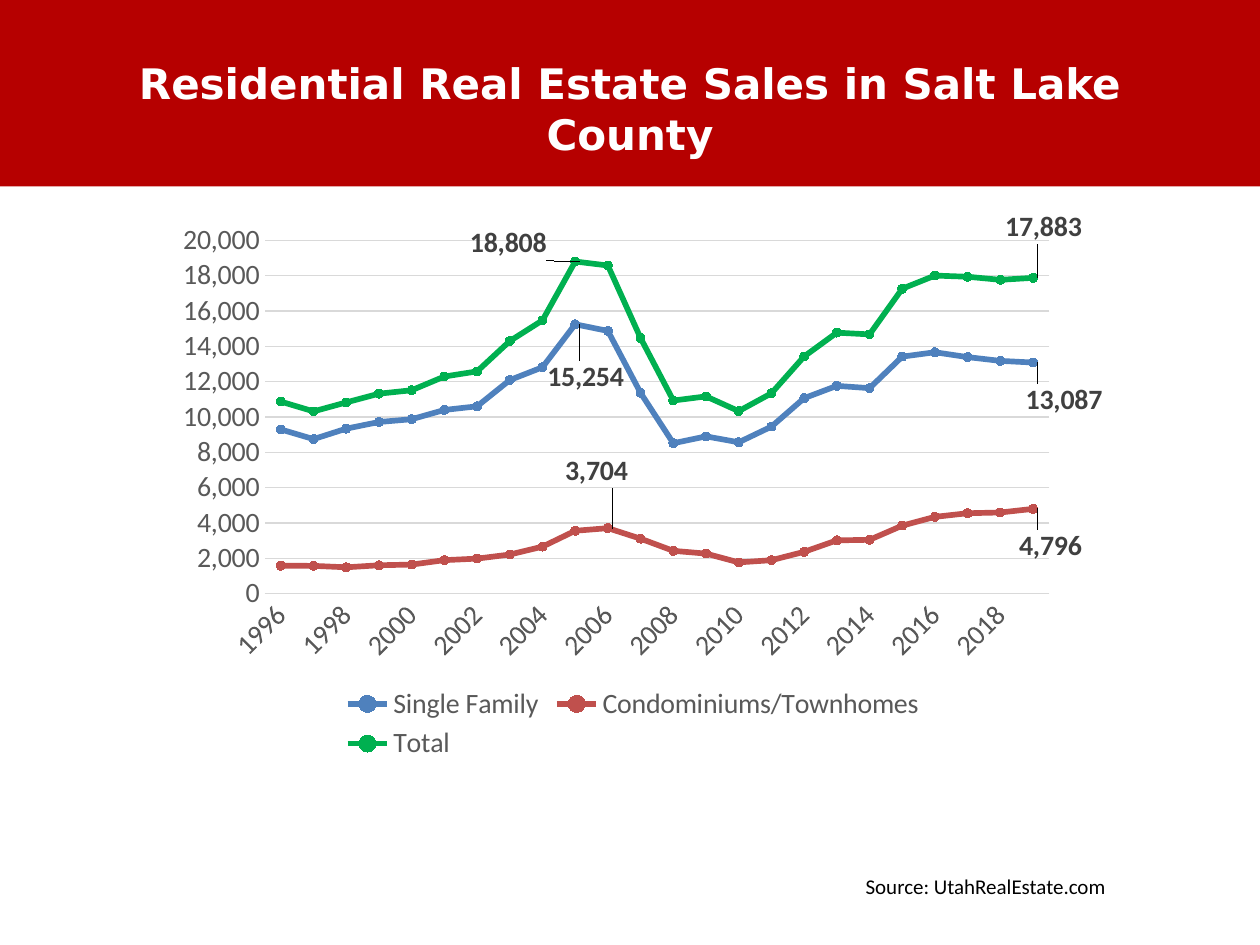
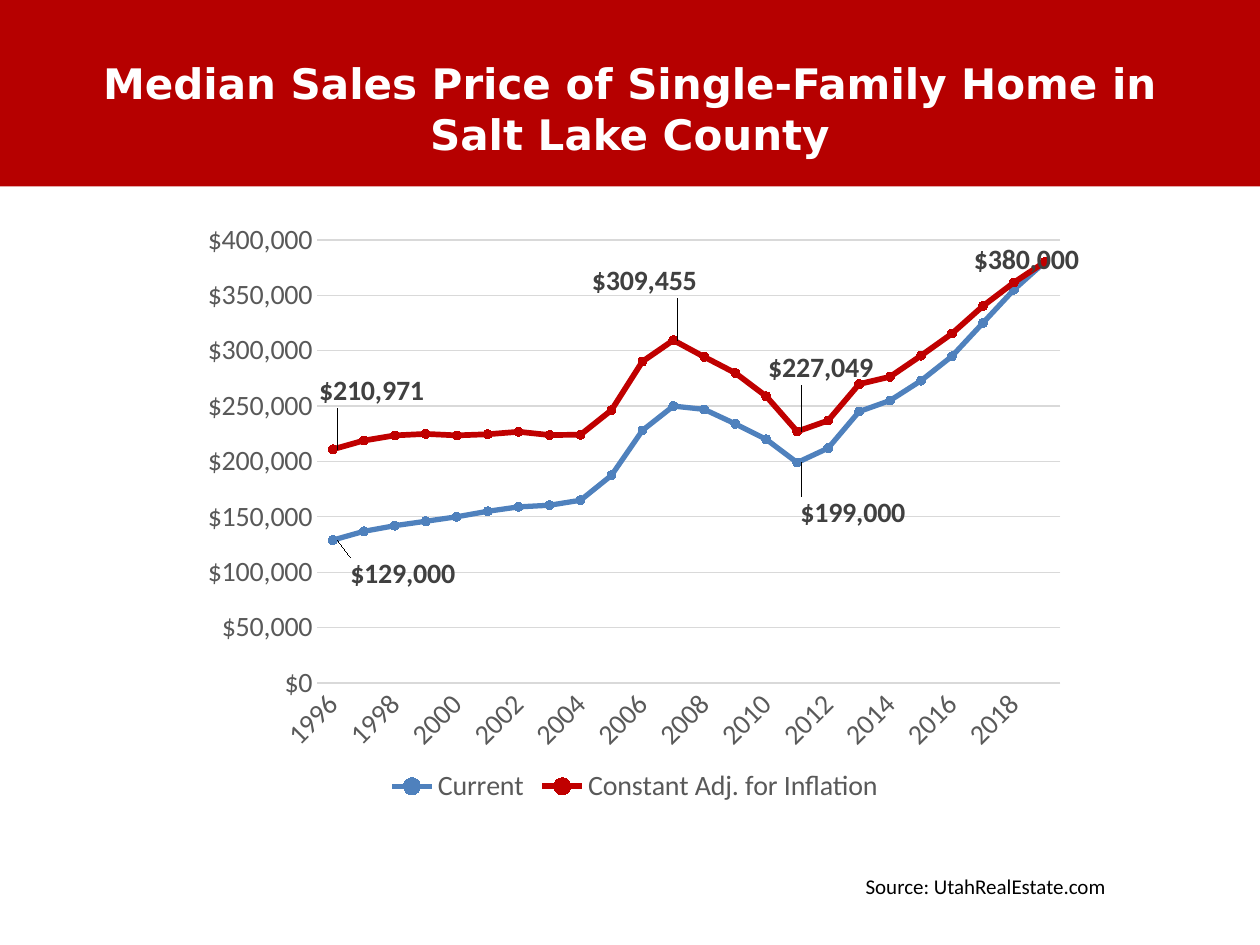
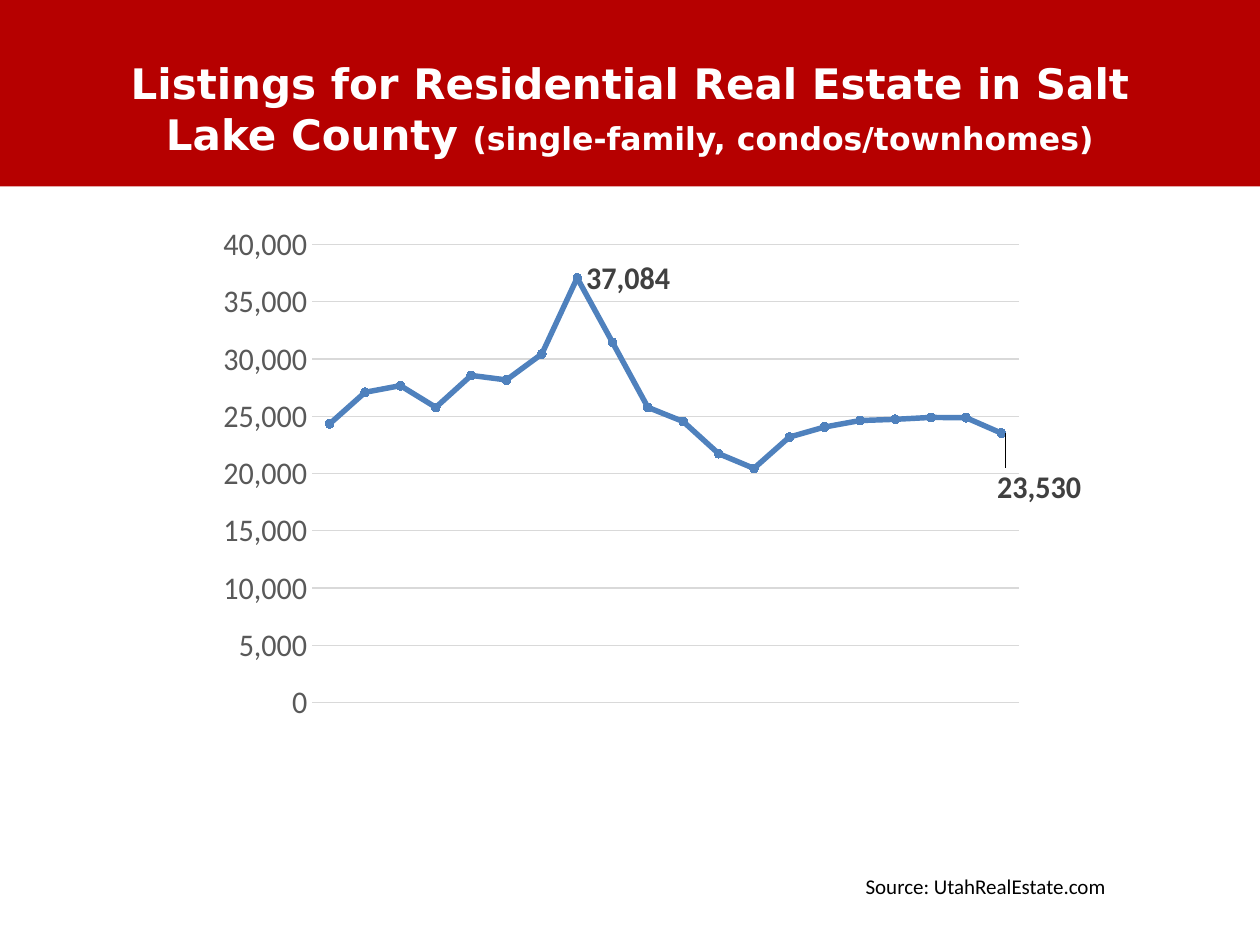
from dataclasses import dataclass

from lxml import etree
from pptx import Presentation
from pptx.chart.data import CategoryChartData
from pptx.dml.color import RGBColor
from pptx.enum.chart import (XL_CHART_TYPE, XL_LABEL_POSITION, XL_LEGEND_POSITION,
                             XL_MARKER_STYLE, XL_TICK_LABEL_POSITION, XL_TICK_MARK)
from pptx.enum.shapes import MSO_SHAPE
from pptx.enum.text import MSO_AUTO_SIZE, PP_ALIGN
from pptx.oxml import parse_xml
from pptx.oxml.ns import qn
from pptx.util import Cm, Pt

LINE_MARKERS = XL_CHART_TYPE.LINE_MARKERS
LABEL_RIGHT = XL_LABEL_POSITION.RIGHT
LEGEND_BOTTOM = XL_LEGEND_POSITION.BOTTOM
CIRCLE = XL_MARKER_STYLE.CIRCLE
NO_LABELS = XL_TICK_LABEL_POSITION.NONE
NO_TICKS = XL_TICK_MARK.NONE
RECTANGLE = MSO_SHAPE.RECTANGLE
FIT_SHAPE = MSO_AUTO_SIZE.SHAPE_TO_FIT_TEXT
CENTER = PP_ALIGN.CENTER

CHART_NS = "http://schemas.openxmlformats.org/drawingml/2006/chart"
LEADER_LINES = (
    f'<c:extLst xmlns:c="{CHART_NS}"><c:ext uri="{{CE6537A1-D6FC-4f65-9D91-7224C49458BB}}" '
    'xmlns:c15="http://schemas.microsoft.com/office/drawing/2012/chart">'
    '<c15:showLeaderLines val="1"/></c:ext></c:extLst>'
)


@dataclass(frozen=True)
class Theme:
    """Colours, fonts and type sizes shared by the slides."""
    band: str = "B60000"
    title: str = "FFFFFF"
    source: str = "000000"
    axis: str = "595959"
    grid: str = "D9D9D9"
    label: str = "404040"
    blue: str = "4F81BD"
    brick: str = "C0504D"
    green: str = "00B050"
    red: str = "C00000"
    title_font: str = "DejaVu Sans"
    body_font: str = "Calibri"
    title_size: int = 24
    subtitle_size: int = 18
    source_size: int = 12


THEME = Theme()


@dataclass
class Line:
    """One chart line; labels map a year to an offset in percent of the chart."""
    name: str
    color: str
    values: list
    labels: dict
    width: float = 3.25


def set_font(font, size, color, name=THEME.body_font, bold=False):
    """Apply a complete font format."""
    font.name, font.size, font.bold = name, Pt(size), bold
    font.color.rgb = RGBColor.from_string(color)


def add_span(para, text, **font_format):
    """Append formatted text to a paragraph."""
    span = para.add_run()
    span.text = text
    set_font(span.font, **font_format)


def add_frame(page, title, subtitle=""):
    """Draw the title band, the title and the source line."""
    band = page.shapes.add_shape(RECTANGLE, 0, 0, Cm(25.4), Cm(3.76))
    band.shadow.inherit = False
    band.fill.solid()
    band.fill.fore_color.rgb = RGBColor.from_string(THEME.band)
    band.line.fill.background()

    title_box = page.shapes.add_textbox(Cm(1.27), Cm(1.04), Cm(22.86), Cm(3.18))
    title_box.text_frame.word_wrap = True
    para = title_box.text_frame.paragraphs[0]
    para.alignment = CENTER
    style = {"color": THEME.title, "name": THEME.title_font, "bold": True}
    add_span(para, title, size=THEME.title_size, **style)
    if subtitle:
        add_span(para, subtitle, size=THEME.subtitle_size, **style)

    source_box = page.shapes.add_textbox(Cm(17.2), Cm(17.48), Cm(5.41), Cm(0.76))
    source_box.text_frame.word_wrap = False
    source_box.text_frame.auto_size = FIT_SHAPE
    add_span(source_box.text_frame.paragraphs[0], "Source: UtahRealEstate.com",
             size=THEME.source_size, color=THEME.source)


def manual_layout(**parts):
    """Return a chart layout element with the given parts in order."""
    layout = parse_xml(f'<c:layout xmlns:c="{CHART_NS}"><c:manualLayout/></c:layout>')
    for tag, value in parts.items():
        etree.SubElement(layout[0], qn(f"c:{tag}")).set("val", str(value))
    return layout


def place_plot(chart, left, top, width, height):
    """Fix the inner plot area, in percent of the chart."""
    area = chart._chartSpace.chart.plotArea
    for layout in area.findall(qn("c:layout")):
        area.remove(layout)
    area.insert(0, manual_layout(layoutTarget="inner", xMode="edge", yMode="edge",
                                 x=left / 100, y=top / 100,
                                 w=width / 100, h=height / 100))


def style_line(series, line, first_year, size):
    """Format a chart line with its markers and point labels."""
    color = RGBColor.from_string(line.color)
    series.smooth = False
    series.format.line.color.rgb = color
    series.format.line.width = Pt(line.width)
    series.marker.style = CIRCLE
    series.marker.size = 5
    series.marker.format.fill.solid()
    series.marker.format.fill.fore_color.rgb = color
    series.marker.format.line.color.rgb = color

    series.data_labels.show_value = False
    for year, (right, down) in line.labels.items():
        index = year - first_year
        label = series.points[index].data_label
        set_font(label.font, size, THEME.label, bold=True)
        label.position = LABEL_RIGHT
        if right or down:
            element = series._element.xpath(f'c:dLbls/c:dLbl[c:idx/@val="{index}"]')[0]
            element.insert(1, manual_layout(x=right / 100, y=down / 100))
    series._element.find(qn("c:dLbls")).append(parse_xml(LEADER_LINES))


def style_axes(chart, size, top, step, show_years):
    """Format both axes and the gridlines."""
    years, amounts = chart.category_axis, chart.value_axis
    for axis in (years, amounts):
        axis.major_tick_mark = axis.minor_tick_mark = NO_TICKS
        set_font(axis.tick_labels.font, size, THEME.axis)
    grid = amounts.major_gridlines.format.line
    for rule in (years.format.line, grid):
        rule.color.rgb = RGBColor.from_string(THEME.grid)
        rule.width = Pt(0.75)
    amounts.format.line.fill.background()
    amounts.minimum_scale, amounts.maximum_scale, amounts.major_unit = 0, top, step
    if show_years:
        years._element.find(qn("c:txPr")).find(qn("a:bodyPr")).set("rot", "-2700000")
    else:
        years.tick_label_position = NO_LABELS


def add_line_chart(page, place, lines, first_year, top, step, plot,
                   size=16, number_format="#,##0", show_years=True):
    """Add a yearly line chart, with a legend if it has several lines."""
    data = CategoryChartData(number_format=number_format)
    data.categories = [str(first_year + i) for i in range(len(lines[0].values))]
    for line in lines:
        data.add_series(line.name, line.values)
    chart = page.shapes.add_chart(LINE_MARKERS, *map(Cm, place), data).chart
    set_font(chart.font, size, THEME.source)
    chart.has_title = False
    chart.plots[0].vary_by_categories = False
    chart.has_legend = len(lines) > 1
    if chart.has_legend:
        chart.legend.position = LEGEND_BOTTOM
        chart.legend.include_in_layout = False
        set_font(chart.legend.font, size, THEME.axis)
    style_axes(chart, size, top, step, show_years)
    chart.value_axis.tick_labels.number_format = number_format
    chart.value_axis.tick_labels.number_format_is_linked = False
    for series, line in zip(chart.plots[0].series, lines):
        style_line(series, line, first_year, size)
    place_plot(chart, *plot)


SALES = [
    Line("Single Family", THEME.blue,
         [9299, 8750, 9343, 9719, 9875, 10403, 10606, 12093, 12819, 15254, 14878, 11368,
          8517, 8905, 8570, 9458, 11067, 11768, 11636, 13421, 13669, 13395, 13179, 13087],
         {2005: (-4, 9.5), 2019: (-1.8, 6.8)}),
    Line("Condominiums/Townhomes", THEME.brick,
         [1576, 1570, 1487, 1604, 1642, 1892, 1979, 2209, 2657, 3554, 3704, 3108,
          2419, 2264, 1765, 1889, 2363, 3012, 3045, 3847, 4344, 4549, 4592, 4796],
         {2006: (-5.6, -10.2), 2019: (-2.5, 6.8)}),
    Line("Total", THEME.green,
         [10875, 10320, 10830, 11323, 11517, 12295, 12585, 14302, 15476, 18808, 18582, 14476,
          10936, 11169, 10335, 11347, 13430, 14780, 14681, 17268, 18013, 17944, 17771, 17883],
         {2005: (-12.3, -3.2), 2019: (-4, -9)}),
]

PRICES = [
    Line("Current", THEME.blue,
         [129000, 136900, 142000, 146000, 150000, 155000, 159000, 160500,
          165000, 187500, 228000, 250000, 247000, 233947, 220000, 199000,
          212000, 245000, 255000, 272900, 295000, 325000, 355000, 380000],
         {1996: (0.9, 5.7), 2011: (-0.7, 8.5)}, width=3),
    Line("Constant Adj. for Inflation", THEME.red,
         [210971, 218869, 223541, 224872, 223519, 224579, 226789, 223828,
          224134, 246352, 290202, 309455, 294381, 279864, 258835, 227049,
          236930, 269815, 276439, 295469, 315404, 340249, 361480, 380000],
         {1996: (-2.6, -9.7), 2007: (-10.2, -9.8), 2011: (-4.3, -10.5), 2019: (-9, -0.3)}),
]

LISTINGS = [
    Line("Series 1", THEME.blue,
         [24343, 27095, 27674, 25780, 28567, 28173, 30445, 37084, 31447, 25779,
          24539, 21737, 20452, 23180, 24061, 24628, 24736, 24898, 24879, 23530],
         {2007: (0, 0), 2019: (-1.6, 9.5)}),
]


def main():
    """Build the three slides and save the deck."""
    deck = Presentation()
    deck.slide_width, deck.slide_height = Cm(25.4), Cm(19.05)
    blank = deck.slide_layouts[6]

    page = deck.slides.add_slide(blank)
    add_frame(page, "Residential Real Estate Sales in Salt Lake County")
    add_line_chart(page, (3.38, 4.22, 18.85, 11.23), SALES, 1996, 20000, 2000,
                   plot=(10.4, 5.6, 84.3, 63.4))

    page = deck.slides.add_slide(blank)
    add_frame(page, "Median Sales Price of Single-Family Home in Salt Lake County")
    add_line_chart(page, (3.81, 4.22, 17.98, 12.09), PRICES, 1996, 400000, 50000,
                   plot=(14.4, 5.1, 83.3, 73.9), number_format='"$"#,##0')

    page = deck.slides.add_slide(blank)
    add_frame(page, "Listings for Residential Real Estate in Salt Lake County ",
              "(single-family, condos/townhomes)")
    add_line_chart(page, (4.45, 4.45, 17.35, 11.43), LISTINGS, 2000, 40000, 5000,
                   plot=(11.1, 4.2, 85.9, 80.8), size=18, show_years=False)

    deck.save("out.pptx")


if __name__ == "__main__":
    main()
